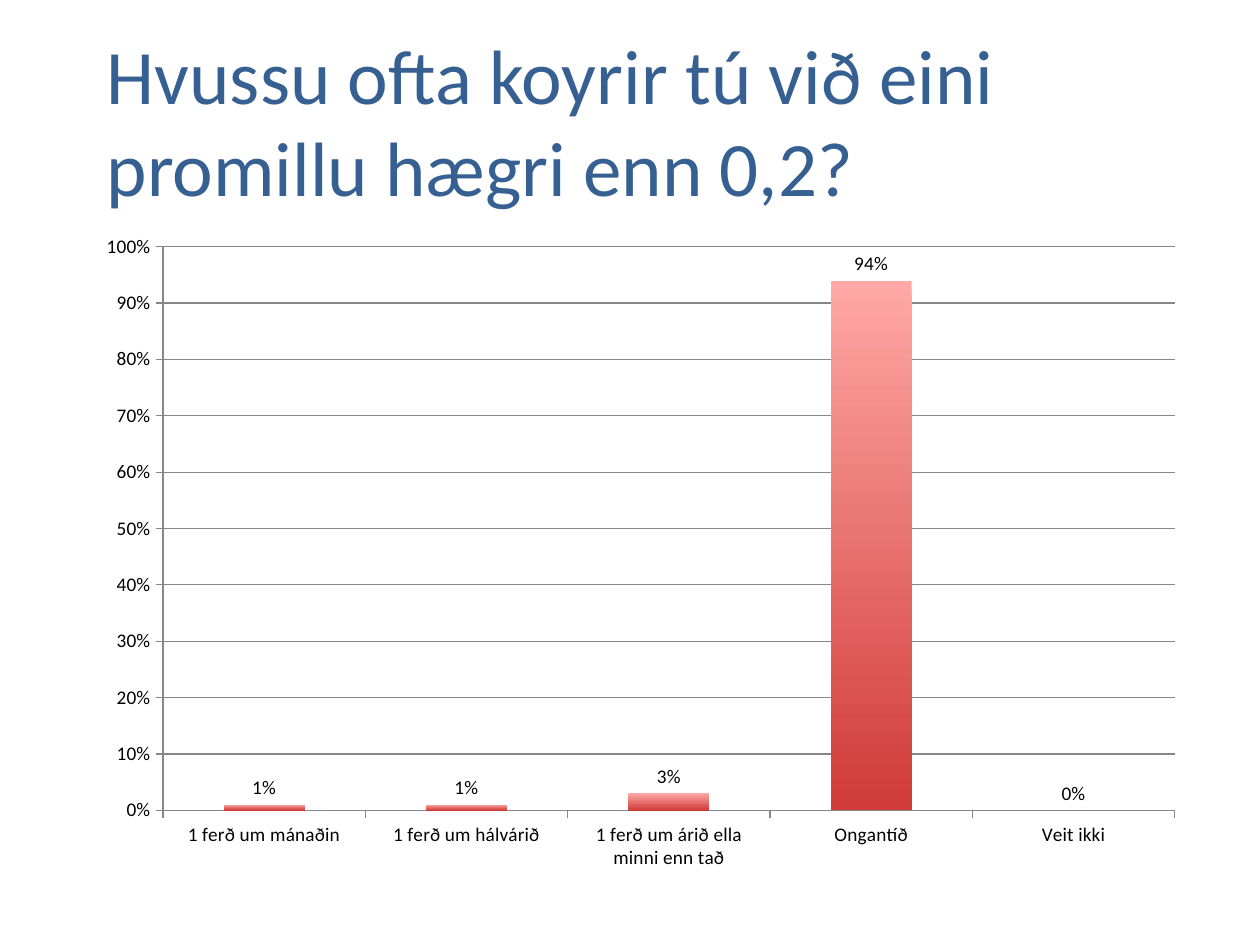
from pptx import Presentation
from pptx.chart.data import CategoryChartData
from pptx.dml.color import RGBColor
from pptx.enum.chart import XL_CHART_TYPE as ChartType
from pptx.enum.chart import XL_LABEL_POSITION as LabelPosition
from pptx.enum.chart import XL_TICK_MARK as TickMark
from pptx.enum.text import MSO_ANCHOR as Anchor
from pptx.util import Pt

TITLE = "Hvussu ofta koyrir tú við eini promillu hægri enn 0,2?"
ANSWERS = [
    ("1 ferð um mánaðin", 0.01),
    ("1 ferð um hálvárið", 0.01),
    ("1 ferð um árið ella minni enn tað", 0.03),
    ("Ongantíð", 0.94),
    ("Veit ikki", 0),
]
FONT = "Calibri"
PERCENT = "0%"
COLORS = {
    "title": "376092",
    "text": "000000",
    "line": "878787",
    "bar_top": "FFA8A5",
    "bar_bottom": "D03B38",
}
TITLE_BOX = (54, 9.4, 635.8, 118)
CHART_BOX = (48.2, 126.7, 635.8, 378)


def style_font(font, size, color):
    font.name = FONT
    font.size = Pt(size)
    font.color.rgb = RGBColor.from_string(COLORS[color])


def style_line(line):
    line.color.rgb = RGBColor.from_string(COLORS["line"])
    line.width = Pt(0.75)


def add_title(page):
    box = page.shapes.add_textbox(*map(Pt, TITLE_BOX))
    frame = box.text_frame
    frame.word_wrap = True
    frame.vertical_anchor = Anchor.MIDDLE
    frame.text = TITLE
    style_font(frame.paragraphs[0].runs[0].font, 44, "title")


def add_answer_chart(page):
    data = CategoryChartData(number_format=PERCENT)
    data.categories = [answer for answer, _ in ANSWERS]
    data.add_series("Series 1", [share for _, share in ANSWERS])
    chart = page.shapes.add_chart(
        ChartType.COLUMN_CLUSTERED, *map(Pt, CHART_BOX), data
    ).chart
    chart.has_title = False
    chart.has_legend = False
    style_font(chart.font, 11, "text")

    for axis in (chart.category_axis, chart.value_axis):
        axis.major_tick_mark = TickMark.OUTSIDE
        axis.minor_tick_mark = TickMark.NONE
        style_line(axis.format.line)
    shares = chart.value_axis
    shares.minimum_scale, shares.maximum_scale, shares.major_unit = 0, 1, 0.1
    shares.tick_labels.number_format = PERCENT
    shares.tick_labels.number_format_is_linked = False
    shares.has_major_gridlines = True
    style_line(shares.major_gridlines.format.line)

    plot = chart.plots[0]
    plot.gap_width = 150
    plot.vary_by_categories = False
    series = plot.series[0]
    series.invert_if_negative = False
    fill = series.format.fill
    fill.gradient()
    fill.gradient_angle = 270
    for stop, color in zip(fill.gradient_stops, ("bar_top", "bar_bottom")):
        stop.color.rgb = RGBColor.from_string(COLORS[color])

    labels = series.data_labels
    labels.show_value = True
    labels.number_format = PERCENT
    labels.number_format_is_linked = False
    labels.position = LabelPosition.OUTSIDE_END
    style_font(labels.font, 11, "text")


def main():
    deck = Presentation()
    deck.slide_width, deck.slide_height = Pt(720), Pt(540)
    page = deck.slides.add_slide(deck.slide_layouts[6])
    add_title(page)
    add_answer_chart(page)
    deck.save("out.pptx")


if __name__ == "__main__":
    main()
